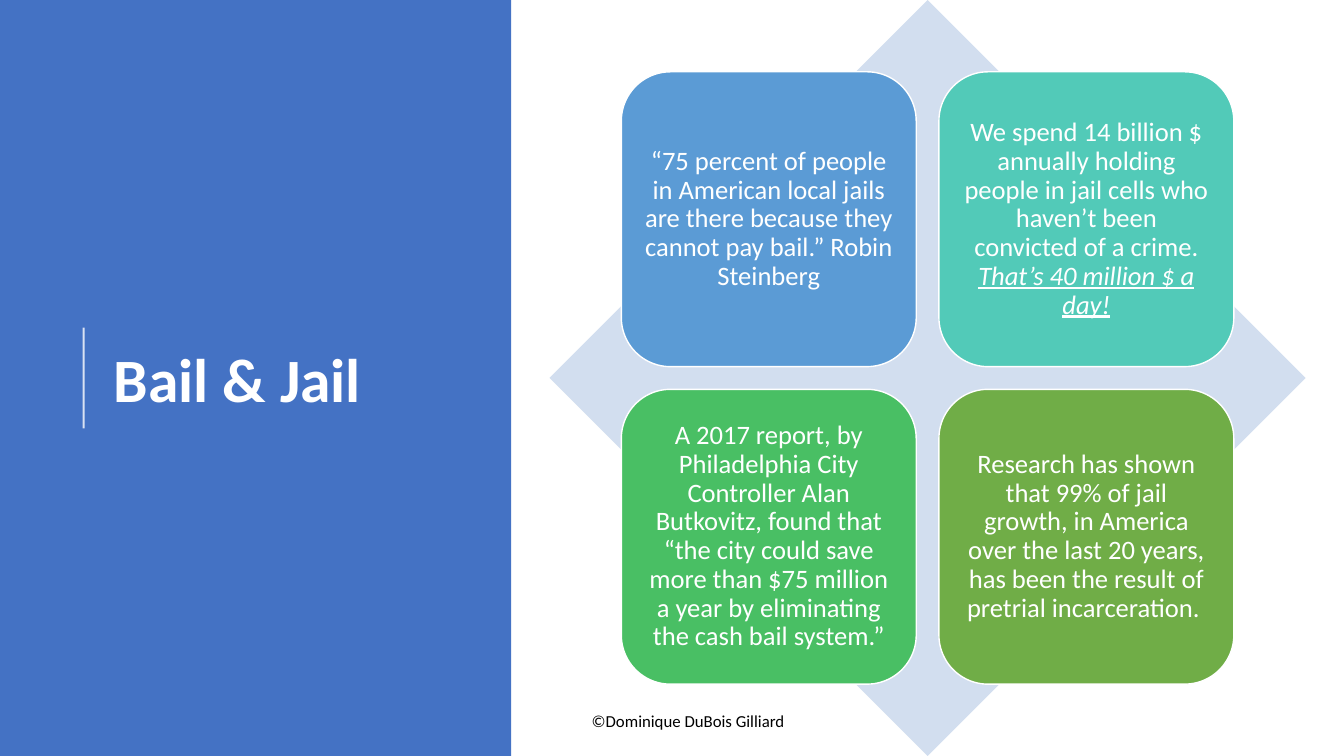
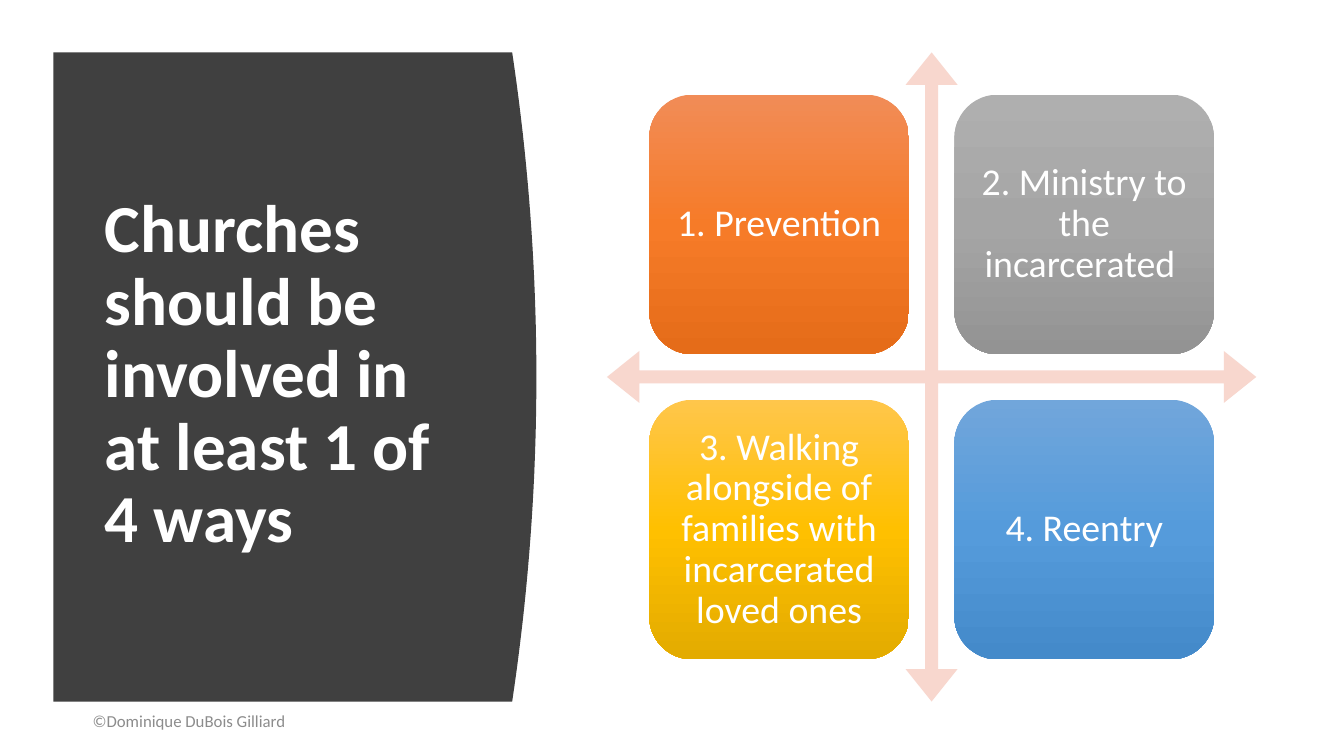
from collections import namedtuple
from dataclasses import dataclass
from itertools import product

from lxml.etree import SubElement
from pptx import Presentation
from pptx.dml.color import RGBColor
from pptx.enum.shapes import MSO_CONNECTOR, MSO_SHAPE
from pptx.enum.text import MSO_ANCHOR, PP_ALIGN
from pptx.oxml.ns import qn
from pptx.util import Inches, Pt

Box = namedtuple("Box", "left top width height")
Span = namedtuple("Span", "text emphasis", defaults=[False])
Tile = namedtuple("Tile", "fill spans")
TileStyle = namedtuple("TileStyle", "start size inset text_size outlined")


@dataclass(frozen=True)
class Theme:
    font: str = "Calibri"
    white: str = "FFFFFF"
    black: str = "000000"
    muted: str = "8C8C8C"
    blue: str = "4472C4"
    charcoal: str = "404040"
    pale_blue: str = "D2DEEF"
    pale_orange: str = "F8D7CE"
    sky: str = "5B9BD5"
    teal: str = "52CAB8"
    green: str = "49BF64"
    olive: str = "70AD47"
    orange_shades: tuple = ("F18C57", "F67B28", "E56C19")
    gray_shades: tuple = ("AFAFAF", "A5A5A5", "939393")
    gold_shades: tuple = ("FFC64B", "FFC000", "E3AB00")
    blue_shades: tuple = ("71A6DB", "559BDB", "448ACA")
    title_size: int = 44
    large_title_size: int = 48
    footer_size: int = 12
    line_spacing: float = 0.9


THEME = Theme()
FOOTER = "©Dominique DuBois Gilliard"
DIAMOND_TILES = TileStyle(0.095, 0.39, 0.08, 19, True)
ARROW_TILES = TileStyle(0.065, 0.4, 0.11, 27, False)


def color(code):
    return RGBColor.from_string(code)


def lengths(box):
    return [Inches(value) for value in box]


def paint(shape, fill):
    shape.shadow.inherit = False
    shape.line.fill.background()
    if isinstance(fill, str):
        shape.fill.solid()
        shape.fill.fore_color.rgb = color(fill)
    else:
        paint_gradient(shape, fill)


def paint_gradient(shape, shades):
    shape.fill.gradient()
    shape.fill.gradient_angle = 270
    stops = shape._element.spPr.find(qn("a:gradFill")).find(qn("a:gsLst"))
    stops.clear()
    for index, shade in enumerate(shades):
        position = 100000 * index // (len(shades) - 1)
        stop = SubElement(stops, qn("a:gs"), pos=str(position))
        SubElement(stop, qn("a:srgbClr"), val=shade)


def add_preset(page, preset, box, fill):
    shape = page.shapes.add_shape(preset, *lengths(box))
    paint(shape, fill)
    return shape


def write(shape, spans, size, shade=THEME.white, bold=False, align=PP_ALIGN.LEFT):
    frame = shape.text_frame
    frame.word_wrap = True
    frame.vertical_anchor = MSO_ANCHOR.MIDDLE
    para = frame.paragraphs[0]
    para.alignment = align
    for span in spans:
        run = para.add_run()
        run.text = span.text
        font = run.font
        font.name, font.size, font.bold = THEME.font, Pt(size), bold
        font.color.rgb = color(shade)
        if span.emphasis:
            font.italic = font.underline = True
    return para


def add_title(page, box, text, size):
    title = page.shapes.add_textbox(*lengths(box))
    para = write(title, [Span(text)], size, bold=True)
    para.line_spacing = THEME.line_spacing


def add_footer(page, box, shade):
    footer = page.shapes.add_textbox(*lengths(box))
    para = write(footer, [Span(FOOTER)], THEME.footer_size, shade)
    para.space_after = Pt(6)


def add_tiles(page, box, style, tiles):
    side = style.size * box.width
    offsets = (style.start, 1 - style.start - style.size)
    for (row, column), tile in zip(product(offsets, repeat=2), tiles):
        place = Box(box.left + column * box.width, box.top + row * box.height, side, side)
        shape = add_preset(page, MSO_SHAPE.ROUNDED_RECTANGLE, place, tile.fill)
        if style.outlined:
            shape.line.color.rgb = color(THEME.white)
            shape.line.width = Pt(1)
        frame = shape.text_frame
        frame.margin_left = frame.margin_right = Inches(style.inset)
        frame.margin_top = frame.margin_bottom = Inches(style.inset)
        para = write(shape, tile.spans, style.text_size, align=PP_ALIGN.CENTER)
        para.line_spacing = THEME.line_spacing


def add_accent_line(page, left, top, height):
    line = page.shapes.add_connector(
        MSO_CONNECTOR.STRAIGHT, *lengths((left, top + height, left, top)))
    line.line.color.rgb = color(THEME.white)
    line.line.width = Pt(1.5)
    properties = line._element.spPr
    shade = next(properties.iter(qn("a:srgbClr")))
    SubElement(shade, qn("a:alpha"), val="80000")
    SubElement(properties, qn("a:effectLst"))


def add_title_band(page, box, title):
    add_preset(page, MSO_SHAPE.RECTANGLE, box, THEME.blue)
    add_title(page, Box(box.left + 1.03, box.top + 0.78, 3.69, 6.02), title, THEME.title_size)
    add_accent_line(page, box.left + 0.83, box.top + 3.25, 1)


def add_curved_panel(page, box, title, bulge=0.24, steps=40):
    edge = box.left + box.width - bulge
    curve = []
    for step in range(steps + 1):
        ratio = step / steps
        reach = bulge * (1 - (2 * ratio - 1) ** 2)
        curve.append((Inches(edge + reach), Inches(box.top + ratio * box.height)))
    builder = page.shapes.build_freeform(Inches(box.left), Inches(box.top))
    builder.add_line_segments(curve + [(Inches(box.left), Inches(box.top + box.height))])
    paint(builder.convert_to_shape(), THEME.charcoal)
    place = Box(box.left + 0.41, box.top + 0.59, 3.74, 5.24)
    add_title(page, place, title, THEME.large_title_size)


def add_diamond_matrix(page, box, tiles):
    add_preset(page, MSO_SHAPE.DIAMOND, box, THEME.pale_blue)
    add_tiles(page, box, DIAMOND_TILES, tiles)


def add_arrow_matrix(page, box, tiles):
    arrows = add_preset(page, MSO_SHAPE.QUAD_ARROW, box, THEME.pale_orange)
    for index, value in enumerate((0.02, 0.04, 0.05)):
        arrows.adjustments[index] = value
    add_tiles(page, box, ARROW_TILES, tiles)


def build_bail_page(page):
    add_title_band(page, Box(0, 0, 5.07, 7.5), "Bail & Jail")
    add_footer(page, Box(5.77, 6.95, 3.14, 0.4), THEME.black)
    add_diamond_matrix(page, Box(5.45, 0, 7.5, 7.5), [
        Tile(THEME.sky, [Span(
            "“75 percent of people in American local jails are there because "
            "they cannot pay bail.” Robin Steinberg")]),
        Tile(THEME.teal, [
            Span("We spend 14 billion $ annually holding people in jail cells "
                 "who haven’t been convicted of a crime. "),
            Span("That’s 40 million $ a day!", True)]),
        Tile(THEME.green, [Span(
            "A 2017 report, by Philadelphia City Controller Alan Butkovitz, "
            "found that “the city could save more than $75 million a year by "
            "eliminating the cash bail system.”")]),
        Tile(THEME.olive, [Span(
            "Research has shown that 99% of jail growth, in America over the "
            "last 20 years, has been the result of pretrial incarceration. ")]),
    ])


def build_churches_page(page):
    add_curved_panel(page, Box(0.53, 0.52, 4.79, 6.44),
                     "Churches should be involved in at least 1 of 4 ways")
    add_footer(page, Box(0.82, 6.95, 4.5, 0.4), THEME.muted)
    add_arrow_matrix(page, Box(6.02, 0.52, 6.44, 6.44), [
        Tile(THEME.orange_shades, [Span("1. Prevention")]),
        Tile(THEME.gray_shades, [Span("2. Ministry to the incarcerated ")]),
        Tile(THEME.gold_shades, [Span(
            "3. Walking alongside of families with incarcerated loved ones")]),
        Tile(THEME.blue_shades, [Span("4. Reentry")]),
    ])


def main():
    deck = Presentation()
    deck.slide_width, deck.slide_height = Inches(13.33), Inches(7.5)
    for build in (build_bail_page, build_churches_page):
        build(deck.slides.add_slide(deck.slide_layouts[6]))
    deck.save("out.pptx")


if __name__ == "__main__":
    main()
